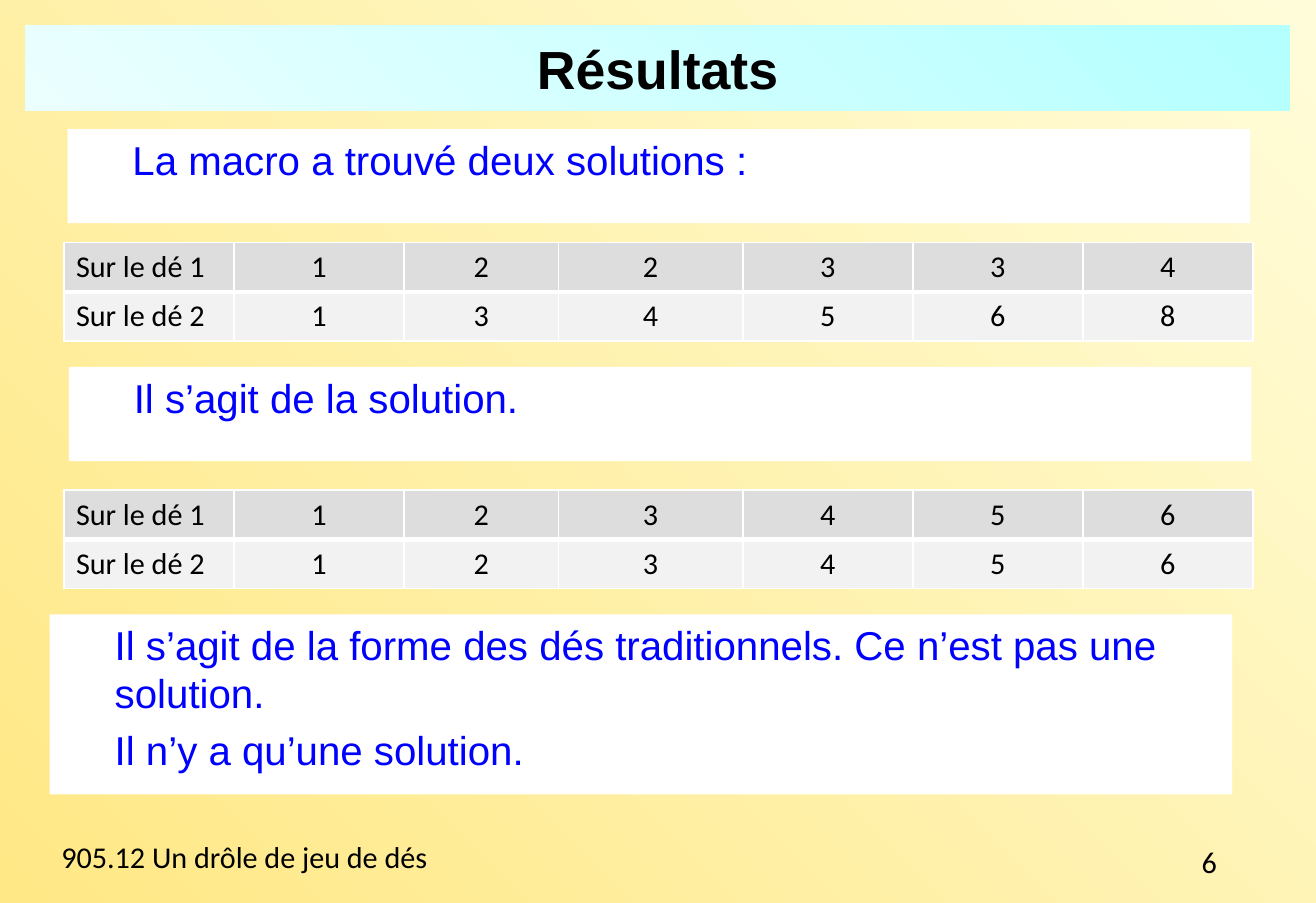
import dataclasses

import pptx
import pptx.dml.color
import pptx.enum.shapes
import pptx.enum.text
import pptx.oxml
import pptx.oxml.ns
import pptx.util

Inches = pptx.util.Inches
Pt = pptx.util.Pt
Align = pptx.enum.text.PP_ALIGN
Anchor = pptx.enum.text.MSO_ANCHOR


@dataclasses.dataclass(frozen=True)
class Theme:
    heading_font: str = "Arial"
    plain_font: str = "Calibri"
    title_size: int = 32
    body_size: int = 24
    plain_size: int = 18
    black: str = "000000"
    blue: str = "0000FF"
    white: str = "FFFFFF"
    row_fills: tuple = ("DDDDDD", "F2F2F2")
    background: tuple = ("FFE885", "FFFCD9")
    banner: tuple = ("B4FFFF", "EBFFFF")
    thin: int = 1
    thick: int = 3


THEME = Theme()
WIDTH = Pt(785.25)
HEIGHT = Pt(538.63)
COLUMNS = (12.92, 12.92, 11.73, 14.02, 12.92, 12.92, 12.92)
ROW = 5.45
TABLE_LEFT = 4.86
BODY_WIDTH = 89.86
BODY_HEIGHT = 10.43


def across(percent):
    return round(WIDTH * percent / 100)


def down(percent):
    return round(HEIGHT * percent / 100)


def frame(left, top, width, height):
    return across(left), down(top), across(width), down(height)


def color(value):
    return pptx.dml.color.RGBColor.from_string(value)


def solid(fill, value):
    fill.solid()
    fill.fore_color.rgb = color(value)


def gradient(fill, colors, angle):
    fill.gradient()
    fill.gradient_angle = angle
    for stop, value, position in zip(fill.gradient_stops, colors, (0, 1)):
        stop.color.rgb = color(value)
        stop.position = position


def add_run(paragraph, text, font, size, value, bold=False):
    run = paragraph.add_run()
    run.text = text
    run.font.name = font
    run.font.size = Pt(size)
    run.font.bold = bold
    run.font.color.rgb = color(value)


def add_box(slide, place):
    shape = slide.shapes.add_shape(
        pptx.enum.shapes.MSO_SHAPE.RECTANGLE, *frame(*place))
    shape.shadow.inherit = False
    shape.line.fill.background()
    shape.text_frame.word_wrap = True
    return shape


def add_title(slide, place, text):
    shape = add_box(slide, place)
    gradient(shape.fill, THEME.banner, 225)
    shape.text_frame.vertical_anchor = Anchor.MIDDLE
    paragraph = shape.text_frame.paragraphs[0]
    paragraph.alignment = Align.CENTER
    add_run(paragraph, text, THEME.heading_font, THEME.title_size,
            THEME.black, bold=True)


def add_body(slide, place, lines):
    shape = add_box(slide, place)
    solid(shape.fill, THEME.white)
    text_frame = shape.text_frame
    text_frame.vertical_anchor = Anchor.TOP
    for index, line in enumerate(lines):
        paragraph = text_frame.add_paragraph() if index else text_frame.paragraphs[0]
        paragraph.level = 1
        paragraph.alignment = Align.LEFT
        paragraph.space_before = Pt(THEME.body_size * 0.2)
        properties = paragraph._p.get_or_add_pPr()
        properties.set("marL", str(Inches(0.44)))
        properties.set("indent", "0")
        add_run(paragraph, line, THEME.heading_font, THEME.body_size, THEME.blue)


def add_label(slide, place, text):
    text_frame = slide.shapes.add_textbox(*frame(*place)).text_frame
    text_frame.word_wrap = True
    add_run(text_frame.paragraphs[0], text, THEME.plain_font,
            THEME.plain_size, THEME.black)


def set_borders(cell, top, bottom):
    properties = cell._tc.get_or_add_tcPr()
    widths = {"L": THEME.thin, "R": THEME.thin, "T": top, "B": bottom}
    for index, (side, width) in enumerate(widths.items()):
        border = pptx.oxml.parse_xml(
            f'<a:ln{side} {pptx.oxml.ns.nsdecls("a")} w="{Pt(width)}">'
            f'<a:solidFill><a:srgbClr val="{THEME.white}"/></a:solidFill>'
            f'</a:ln{side}>')
        properties.insert(index, border)


def add_dice_table(slide, top, dice):
    graphic = slide.shapes.add_table(
        len(dice), len(COLUMNS),
        *frame(TABLE_LEFT, top, sum(COLUMNS), ROW * len(dice)))
    table = graphic.table
    for column, width in zip(table.columns, COLUMNS):
        column.width = across(width)
    edges = (THEME.thin, THEME.thick, THEME.thin)
    for row_index, faces in enumerate(dice):
        table.rows[row_index].height = down(ROW)
        texts = [f"Sur le dé {row_index + 1}", *map(str, faces)]
        for column_index, text in enumerate(texts):
            cell = table.cell(row_index, column_index)
            solid(cell.fill, THEME.row_fills[row_index])
            set_borders(cell, edges[row_index], edges[row_index + 1])
            cell.vertical_anchor = Anchor.MIDDLE
            paragraph = cell.text_frame.paragraphs[0]
            paragraph.alignment = Align.CENTER if column_index else Align.LEFT
            add_run(paragraph, text, THEME.plain_font, THEME.plain_size, THEME.black)


def main():
    presentation = pptx.Presentation()
    presentation.slide_width = WIDTH
    presentation.slide_height = HEIGHT
    slide = presentation.slides.add_slide(presentation.slide_layouts[6])
    gradient(slide.background.fill, THEME.background, 45)

    add_label(slide, (3.76, 92.14, 75.83, 5.35), "905.12 Un drôle de jeu de dés")
    add_title(slide, (1.93, 2.78, 96.09, 9.49), "Résultats")
    add_body(slide, (5.13, 14.3, BODY_WIDTH, BODY_HEIGHT),
             ["La macro a trouvé deux solutions :"])
    add_label(slide, (90.41, 92.7, 6.05, 5.35), "6")
    add_dice_table(slide, 26.87, [(1, 2, 2, 3, 3, 4), (1, 3, 4, 5, 6, 8)])
    add_body(slide, (5.23, 40.64, BODY_WIDTH, BODY_HEIGHT),
             ["Il s’agit de la solution."])
    add_dice_table(slide, 54.28, [range(1, 7), range(1, 7)])
    add_body(slide, (3.78, 68.05, BODY_WIDTH, 19.92),
             ["Il s’agit de la forme des dés traditionnels. Ce n’est pas une solution.",
              "Il n’y a qu’une solution."])
    presentation.save("out.pptx")


if __name__ == "__main__":
    main()
